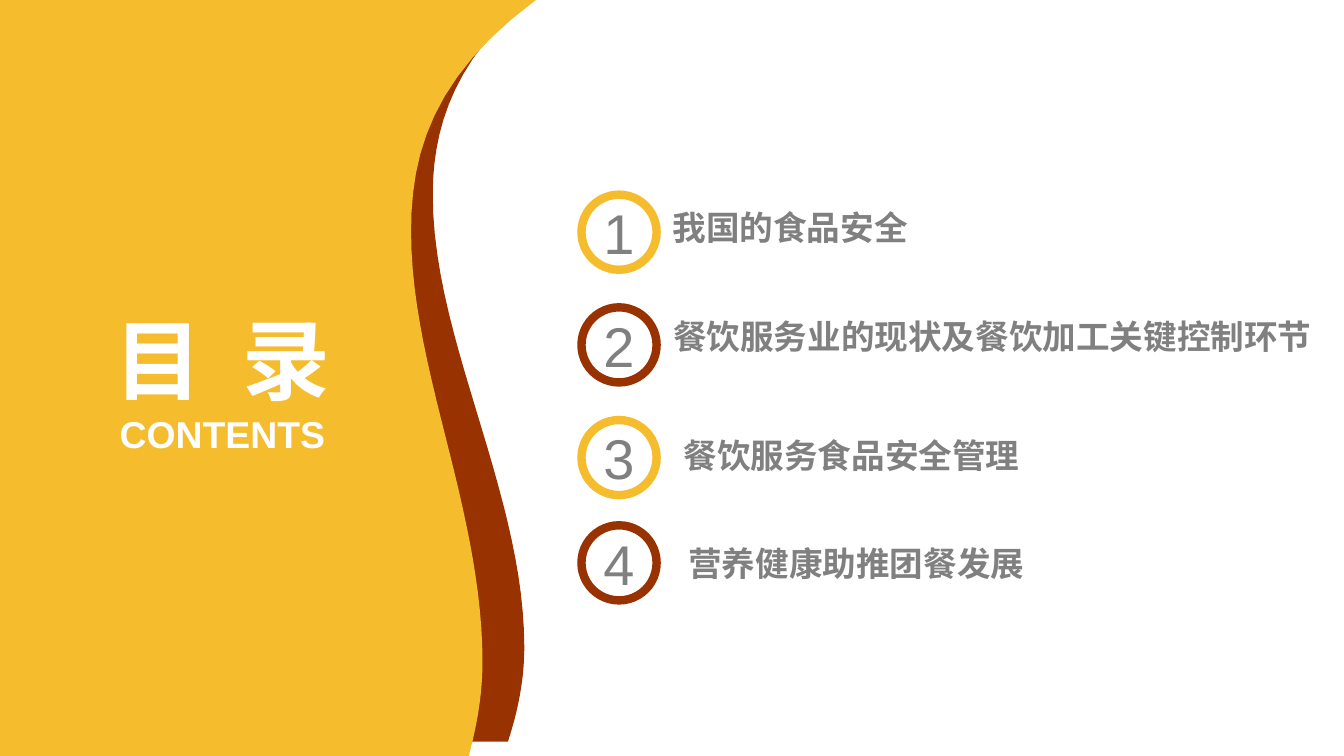
from dataclasses import dataclass
from itertools import cycle, pairwise

from pptx import Presentation
from pptx.dml.color import RGBColor
from pptx.enum.shapes import MSO_SHAPE
from pptx.enum.text import MSO_ANCHOR, MSO_AUTO_SIZE, PP_ALIGN
from pptx.util import Cm, Pt

COLOURS = {
    "yellow": "F5BD2E",
    "brown": "983201",
    "grey": "808080",
    "white": "FFFFFF",
}
FRAME_FORMAT = {
    "margin_left": 0,
    "margin_top": 0,
    "margin_right": 0,
    "margin_bottom": 0,
    "word_wrap": True,
    "vertical_anchor": MSO_ANCHOR.MIDDLE,
}
SLIDE_WIDTH, SLIDE_HEIGHT = 25.4, 14.29
RING_SIZE = 1.42
LABEL_HEIGHT = 0.76
STEPS_PER_BEND = 12


@dataclass
class Knot:
    """A point on a wavy edge, with its sideways drift per unit of descent."""

    x: float
    y: float
    drift: float = 0


@dataclass
class Chapter:
    """A chapter label and its place relative to the contents list."""

    label: str
    ring_top: float
    label_left: float
    label_top: float
    label_width: float


PANEL_EDGE = [Knot(10.13, 0, -1.35), Knot(7.77, 4.37), Knot(8.51, 8.61, 0.25),
              Knot(9.12, 12.52), Knot(8.86, SLIDE_HEIGHT, -0.27)]
RIBBON_OUTER_EDGE = [Knot(9.63, 0.28, -1), Knot(8.18, 3.68), Knot(9.12, 8.15, 0.3),
                     Knot(9.91, 12.24), Knot(9.6, 14.02, -0.33)]
RIBBON_INNER_EDGE = [Knot(9.6, 0.28, -1.7), Knot(6.76, 4.47), Knot(7.65, 8.56, 0.3),
                     Knot(8.38, 12.32), Knot(8.08, 14.02, -0.33)]
RIBBON_TOP_LEFT = (0.23, 0.28)

CHAPTERS = [
    Chapter("我国的食品安全", 0, 1.72, 0.24, 12.7),
    Chapter("餐饮服务业的现状及餐饮加工关键控制环节", 2.13, 1.73, 2.3, 12.22),
    Chapter("餐饮服务食品安全管理", 4.26, 1.93, 4.55, 9.78),
    Chapter("营养健康助推团餐发展", 6.25, 2.02, 6.58, 6.76),
]


def colour(name):
    """Return the named colour."""
    return RGBColor.from_string(COLOURS[name])


def apply_format(target, values):
    """Set every attribute listed in values on target."""
    for name, value in values.items():
        setattr(target, name, value)


def fill_shape(shape, colour_name):
    """Give a shape a flat fill without shadow."""
    shape.shadow.inherit = False
    shape.fill.solid()
    shape.fill.fore_color.rgb = colour(colour_name)


def write_text(shape, text, size, colour_name, alignment, bold=False):
    """Write one paragraph into a shape and return its first run."""
    apply_format(shape.text_frame, FRAME_FORMAT)
    paragraph = shape.text_frame.paragraphs[0]
    paragraph.alignment = alignment
    run = paragraph.add_run()
    run.text = text
    apply_format(run.font, {"name": "Arial", "size": Pt(size), "bold": bold})
    run.font.color.rgb = colour(colour_name)
    return run


def add_label(slide, box, text, size, colour_name, alignment):
    """Add a bold text box at box and return its run."""
    shape = slide.shapes.add_textbox(*map(Cm, box))
    run = write_text(shape, text, size, colour_name, alignment, bold=True)
    shape.text_frame.auto_size = MSO_AUTO_SIZE.SHAPE_TO_FIT_TEXT
    return run


def bend_point(start, end, progress):
    """Return the point at progress along a cubic Hermite bend."""
    height = end.y - start.y
    blend = progress ** 2 * (3 - 2 * progress)
    start_pull = progress * (1 - progress) ** 2
    end_pull = progress ** 2 * (progress - 1)
    x = start.x + (end.x - start.x) * blend
    x += height * (start.drift * start_pull + end.drift * end_pull)
    return x, start.y + height * progress


def wavy_edge(knots):
    """Return points from top to bottom of a smooth edge through the knots."""
    points = [bend_point(start, end, step / STEPS_PER_BEND)
              for start, end in pairwise(knots) for step in range(STEPS_PER_BEND)]
    return points + [(knots[-1].x, knots[-1].y)]


def add_outline(slide, left, top, points, colour_name):
    """Add a filled outline through points relative to left and top."""
    corners = [(Cm(left + x), Cm(top + y)) for x, y in points]
    builder = slide.shapes.build_freeform(*corners[0])
    builder.add_line_segments(corners[1:], close=True)
    shape = builder.convert_to_shape()
    fill_shape(shape, colour_name)
    shape.line.fill.background()


def add_title_panel(slide, left, top):
    """Draw the wavy side panel with the title in two languages."""
    ribbon = wavy_edge(RIBBON_OUTER_EDGE) + wavy_edge(RIBBON_INNER_EDGE)[::-1]
    add_outline(slide, left, top, [RIBBON_TOP_LEFT, *ribbon], "brown")
    panel = [(0, 0), *wavy_edge(PANEL_EDGE), (0, SLIDE_HEIGHT)]
    add_outline(slide, left, top, panel, "yellow")

    title = add_label(slide, (left + 1.37, top + 5.77, 5.66, 2.01),
                      "目 录", 47, "white", PP_ALIGN.CENTER)
    title.font._element.set("spc", "550")
    add_label(slide, (left + 1.4, top + 7.77, 5.61, 0.86),
              "CONTENTS", 20, "white", PP_ALIGN.CENTER)


def add_number(slide, left, top, number, ring_colour):
    """Draw a ringed chapter number."""
    shape = slide.shapes.add_shape(
        MSO_SHAPE.OVAL, Cm(left), Cm(top), Cm(RING_SIZE), Cm(RING_SIZE))
    fill_shape(shape, "white")
    shape.line.color.rgb = colour(ring_colour)
    shape.line.width = Pt(4.5)
    write_text(shape, str(number), 30, "grey", PP_ALIGN.CENTER)


def add_contents(slide, left, top):
    """List the chapters with rings in alternating colours."""
    ring_colours = cycle(["yellow", "brown"])
    for number, (chapter, ring_colour) in enumerate(zip(CHAPTERS, ring_colours), 1):
        add_number(slide, left, top + chapter.ring_top, number, ring_colour)
        box = (left + chapter.label_left, top + chapter.label_top,
               chapter.label_width, LABEL_HEIGHT)
        add_label(slide, box, chapter.label, 18, "grey", PP_ALIGN.LEFT)


def main():
    """Build the contents slide and save it."""
    presentation = Presentation()
    presentation.slide_width = Cm(SLIDE_WIDTH)
    presentation.slide_height = Cm(SLIDE_HEIGHT)
    slide = presentation.slides.add_slide(presentation.slide_layouts[6])
    add_title_panel(slide, 0, 0)
    add_contents(slide, 10.99, 3.68)
    presentation.save("out.pptx")


if __name__ == "__main__":
    main()
